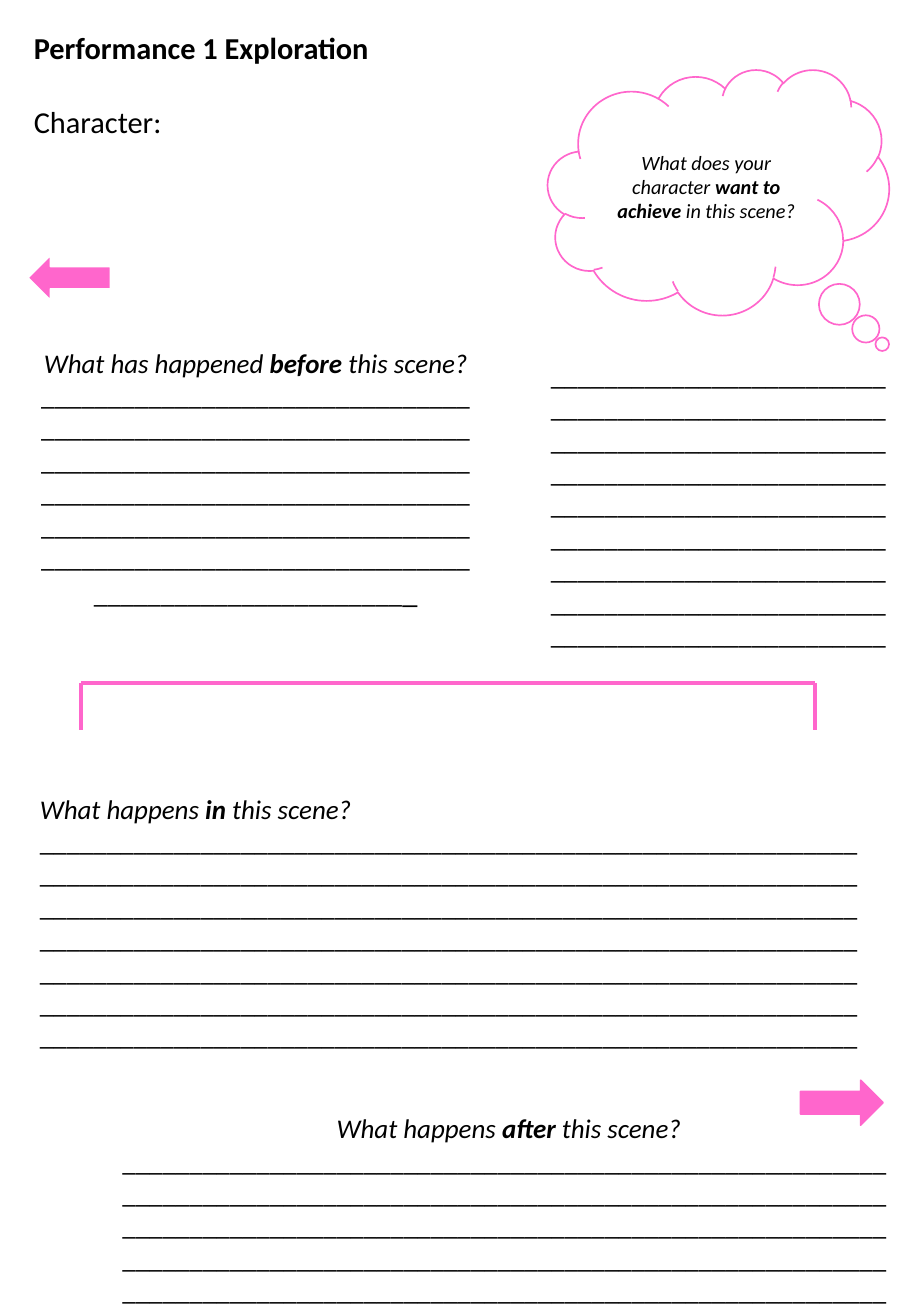
import pptx
import pptx.util
import pptx.dml.color
import pptx.enum.shapes
import pptx.enum.text
import pptx.oxml.ns
import lxml.etree

PX = 9144  # EMU per px, 100 px to the inch
PINK = pptx.dml.color.RGBColor(0xFF, 0x66, 0xCC)
WHITE = pptx.dml.color.RGBColor(0xFF, 0xFF, 0xFF)
BLACK = pptx.dml.color.RGBColor(0, 0, 0)
FONT = "Calibri"
SHAPE = pptx.enum.shapes.MSO_SHAPE
LEFT = pptx.enum.text.PP_ALIGN.LEFT
CENTER = pptx.enum.text.PP_ALIGN.CENTER


def emu(*sizes):
    return [size * PX for size in sizes]


def add_text(para, text, size=16, bold=False, italic=False):
    run = para.add_run()
    run.text = text
    font = run.font
    font.name, font.size = FONT, pptx.util.Pt(size)
    font.bold, font.italic = bold, italic
    font.color.rgb = BLACK


def add_query(para, before, key, after, size=16):
    """A question in italics with its key word in bold."""
    para.alignment = CENTER
    add_text(para, before, size, italic=True)
    add_text(para, key, size, bold=True, italic=True)
    add_text(para, after, size, italic=True)


def add_frame(slide, box):
    frame = slide.shapes.add_textbox(*emu(*box)).text_frame
    frame.word_wrap = True
    return frame


def add_shape(slide, kind, box, fill, line):
    shape = slide.shapes.add_shape(kind, *emu(*box))
    shape.shadow.inherit = False
    shape.fill.solid()
    shape.fill.fore_color.rgb = fill
    shape.line.color.rgb = line
    shape.line.width = pptx.util.Pt(1)
    return shape


def add_title(slide, box):
    frame = add_frame(slide, box)
    head = frame.paragraphs[0]
    head.space_after = pptx.util.Pt(22)
    add_text(head, "Performance 1 Exploration", 18, bold=True)
    add_text(frame.add_paragraph(), "Character:", 18)


def add_rules(para, count, align):
    """Writing lines: one run of underscores that wraps in its box."""
    para.alignment = align
    add_text(para, "_" * count)


def add_notes(slide, box, query, count, heading=CENTER, rules=LEFT):
    frame = add_frame(slide, box)
    add_query(frame.paragraphs[0], *query)
    frame.paragraphs[0].alignment = heading
    para = frame.add_paragraph()
    add_rules(para, count, rules)
    return para


def add_goal(slide, box):
    """Thought cloud with its writing lines below."""
    x, y, w, h = box
    cloud = add_shape(slide, SHAPE.CLOUD_CALLOUT, (x + 11, y, 281, 202), WHITE, PINK)
    cloud.adjustments[0], cloud.adjustments[1] = 0.48, 0.62
    frame = cloud.text_frame
    frame.word_wrap = True
    frame.vertical_anchor = pptx.enum.text.MSO_ANCHOR.MIDDLE
    add_query(frame.paragraphs[0], "What does your character ",
              "want to achieve ", "in this scene?", size=12)
    lines = add_frame(slide, (x, y + 233, w, h - 233))
    add_rules(lines.paragraphs[0], 9 * 25, CENTER)


def add_bracket(slide, box):
    x, y, w, h = box
    ends = [(x, y, x + w, y), (x, y, x, y + h), (x + w, y, x + w, y + h)]
    for end in ends:
        line = slide.shapes.add_connector(
            pptx.enum.shapes.MSO_CONNECTOR.STRAIGHT, *emu(*end))
        line.line.color.rgb = PINK
        line.line.width = pptx.util.Pt(2.25)
        lxml.etree.SubElement(line._element.spPr, pptx.oxml.ns.qn("a:effectLst"))


def add_arrow(slide, box, line, turn=0):
    arrow = add_shape(slide, SHAPE.RIGHT_ARROW, box, PINK, line)
    arrow.rotation = turn


def add_sheet(slide):
    add_title(slide, (18, 19, 600, 101))
    add_bracket(slide, (67, 562, 604, 39))

    # Before, in and after the scene
    last = add_notes(slide, (23, 280, 375, 229),
                     ("What has happened ", "before", " this scene?"),
                     6 * 32 + 23, rules=CENTER)
    add_text(last, "_", 18)
    add_notes(slide, (23, 647, 704, 226),
              ("What happens ", "in", " this scene?"), 6 * 62 + 55, heading=LEFT)
    add_notes(slide, (91, 910, 656, 173),
              ("What happens ", "after", " this scene?"), 5 * 57)

    # Arrows back and onward
    add_arrow(slide, (659, 889, 68, 37), PINK)
    add_arrow(slide, (23, 210, 68, 37), WHITE, turn=180)

    add_goal(slide, (440, 57, 303, 485))


def main():
    deck = pptx.Presentation()
    deck.slide_width, deck.slide_height = emu(750, 1083)
    add_sheet(deck.slides.add_slide(deck.slide_layouts[6]))
    deck.save("out.pptx")


if __name__ == "__main__":
    main()
